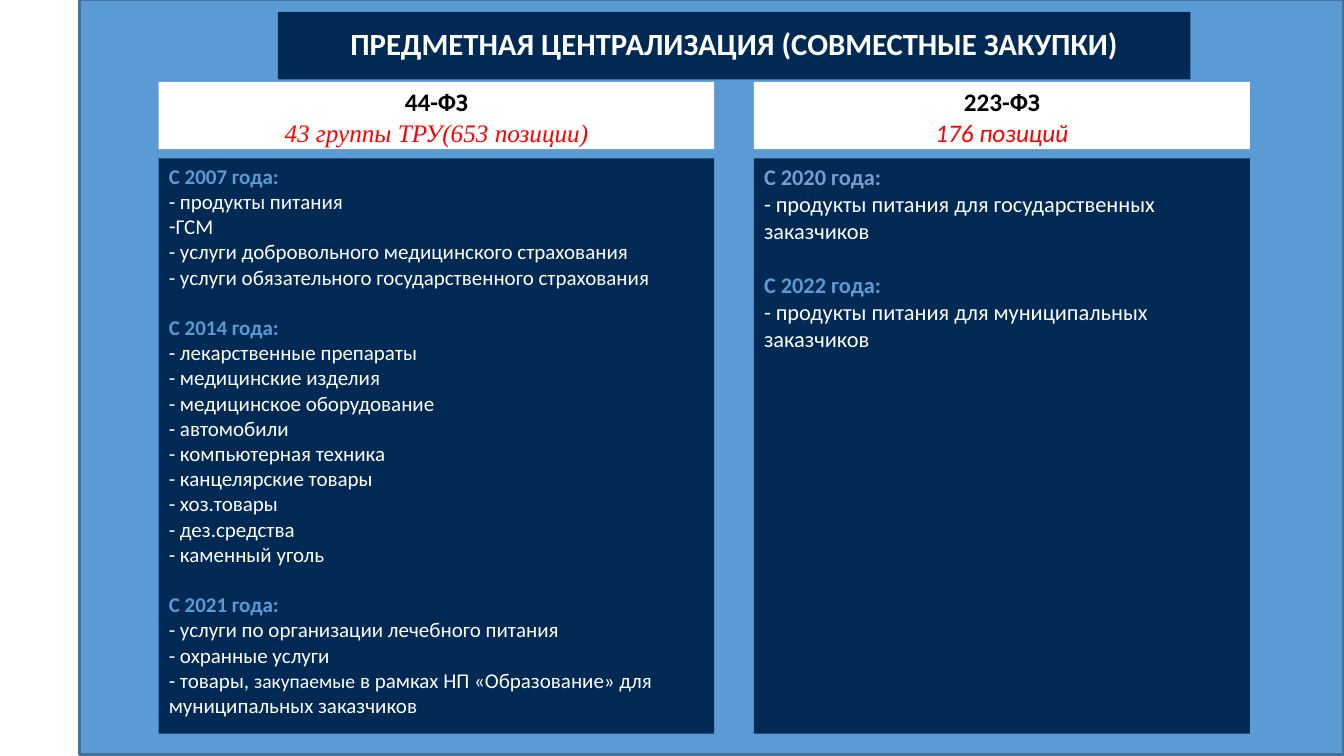
from pptx import Presentation
from pptx.dml.color import RGBColor as RGB
from pptx.enum.shapes import MSO_SHAPE as SHAPE
from pptx.enum.text import MSO_ANCHOR as ANCHOR, MSO_AUTO_SIZE as FIT, PP_ALIGN as ALIGN
from pptx.oxml.ns import qn
from pptx.util import Cm, Pt
from lxml import etree

BLUE = RGB(0x5B, 0x9B, 0xD5)
PALE_BLUE = RGB(0x72, 0x9F, 0xCF)
EDGE = RGB(0x43, 0x72, 0x9D)
NAVY = RGB(0x00, 0x29, 0x54)
WHITE = RGB(0xFF, 0xFF, 0xFF)
BLACK = RGB(0x00, 0x00, 0x00)
RED = RGB(0xFF, 0x00, 0x00)

TITLE = "ПРЕДМЕТНАЯ ЦЕНТРАЛИЗАЦИЯ (СОВМЕСТНЫЕ ЗАКУПКИ)"
BULLETED = "ГСМ"
SMALLER = "закупаемые"

LAW_44 = dict(
    law="44-ФЗ", count="43 группы ТРУ(653 позиции)", count_font="Times New Roman",
    size=15, gap=18,
    groups=[
        ("С 2007 года:", BLUE, [
            "- продукты питания",
            BULLETED,
            "- услуги добровольного медицинского страхования",
            "- услуги обязательного государственного страхования"]),
        ("С 2014 года:", BLUE, [
            "- лекарственные препараты",
            "- медицинские изделия",
            "- медицинское оборудование",
            "- автомобили",
            "- компьютерная техника",
            "- канцелярские товары",
            "- хоз.товары",
            "- дез.средства",
            "- каменный уголь"]),
        ("С 2021 года:", BLUE, [
            "- услуги по организации лечебного питания",
            "- охранные услуги",
            "- товары, закупаемые в рамках НП «Образование» для муниципальных заказчиков"]),
    ])
LAW_223 = dict(
    law="223-ФЗ", count="176 позиций", count_font="Calibri", size=16, gap=19.3,
    groups=[
        ("С 2020 года:", PALE_BLUE, ["- продукты питания для государственных заказчиков"]),
        ("С 2022 года:", BLUE, ["- продукты питания для муниципальных заказчиков"]),
    ])


def set_box(sp, left, top, width, height, fill):
    box = dict(left=left, top=top, width=width, height=height)
    for name, value in box.items():
        setattr(sp, name, Cm(value))
    sp.fill.solid()
    sp.fill.fore_color.rgb = fill


def set_frame(sp, anchor):
    tf = sp.text_frame
    frame = dict(word_wrap=True, auto_size=FIT.NONE, vertical_anchor=anchor)
    for name, value in frame.items():
        setattr(tf, name, value)
    return tf


def add_paragraph(tf, first=False, bullet=None, **paragraph):
    """Return an unindented paragraph; the first one reuses the empty paragraph of the frame."""
    p = tf.paragraphs[0] if first else tf.add_paragraph()
    values = dict(alignment=ALIGN.LEFT, line_spacing=1.0, space_before=Pt(0), space_after=Pt(0))
    for name, value in (values | paragraph).items():
        setattr(p, name, value)
    pPr = p._p.get_or_add_pPr()
    pPr.set("marL", "0")
    pPr.set("indent", "0")
    bu = etree.SubElement(pPr, qn("a:buChar" if bullet else "a:buNone"))
    if bullet:
        bu.set("char", bullet)
    return p


def add_run(p, text, size, color, **font):
    r = p.add_run()
    r.text = text
    values = dict(name="Calibri", size=Pt(size), bold=False, italic=False)
    for name, value in (values | font).items():
        setattr(r.font, name, value)
    r.font.color.rgb = color


def add_backdrop(slide, left, top, width, height):
    """Draw the blue panel behind the placeholders."""
    sp = slide.shapes.add_shape(SHAPE.RECTANGLE, 0, 0, 0, 0)
    set_box(sp, left, top, width, height, BLUE)
    sp.line.color.rgb = EDGE
    sp.line.width = Pt(2)
    sp.shadow.inherit = False
    slide.shapes._spTree.insert(2, sp._element)


def fill_title(sp, left, top, width, height):
    set_box(sp, left, top, width, height, NAVY)
    p = add_paragraph(set_frame(sp, ANCHOR.MIDDLE), first=True, alignment=ALIGN.CENTER,
                      line_spacing=0.9, space_before=Pt(8.8), space_after=Pt(6))
    add_run(p, TITLE, 22, WHITE, bold=True)


def fill_heading(sp, column):
    tf = set_frame(sp, ANCHOR.TOP)
    p = add_paragraph(tf, first=True, alignment=ALIGN.CENTER)
    add_run(p, column["law"], 18, BLACK, bold=True)
    p = add_paragraph(tf, alignment=ALIGN.CENTER)
    add_run(p, column["count"], 18, RED, italic=True, name=column["count_font"])


def fill_list(sp, column):
    tf = set_frame(sp, ANCHOR.TOP)
    size = column["size"]
    for i, (year, color, items) in enumerate(column["groups"]):
        p = add_paragraph(tf, first=i == 0, space_before=Pt(column["gap"] if i else 0))
        add_run(p, year, size, color, bold=True)
        for item in items:
            p = add_paragraph(tf, bullet="-" if item == BULLETED else None)
            before, smaller, after = item.partition(SMALLER)
            for text, pt in ((before, size), (smaller, size - 1), (after, size)):
                if text:
                    add_run(p, text, pt, WHITE)


def fill_column(heading, body, column, left, top, width, height):
    """Stack a white heading and a navy list in the given box."""
    heading_height, gap = 1.7, 0.23
    offset = heading_height + gap
    set_box(heading, left, top, width, heading_height, WHITE)
    fill_heading(heading, column)
    set_box(body, left, top + offset, width, height - offset, NAVY)
    fill_list(body, column)


def main():
    prs = Presentation()
    prs.slide_width, prs.slide_height = Cm(33.87), Cm(19.05)
    slide = prs.slides.add_slide(prs.slide_layouts.get_by_name("Comparison"))
    title, heading_44, list_44, heading_223, list_223 = slide.placeholders

    add_backdrop(slide, 2, 0, 31.85, 19.02)
    fill_title(title, 7, 0.3, 23, 1.7)
    fill_column(heading_44, list_44, LAW_44, 4, 2.06, 14, 16.43)
    fill_column(heading_223, list_223, LAW_223, 19, 2.06, 12.5, 16.43)
    prs.save("out.pptx")


if __name__ == "__main__":
    main()
